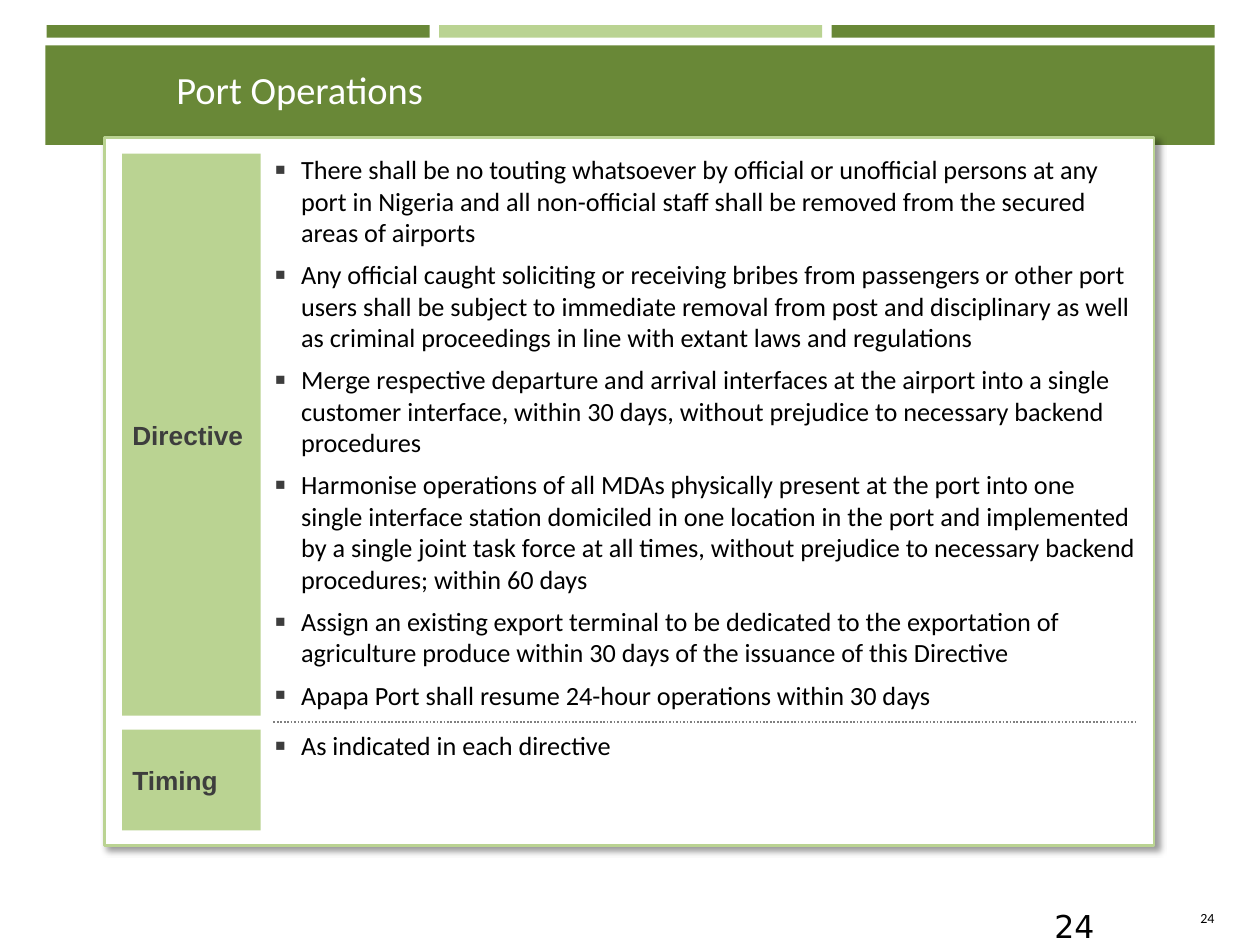
from pptx import Presentation
from pptx.util import Inches, Pt
from pptx.dml.color import RGBColor
from pptx.enum.dml import MSO_LINE
from pptx.enum.shapes import MSO_CONNECTOR, MSO_SHAPE
from pptx.enum.text import MSO_ANCHOR as ANCHOR, PP_ALIGN as ALIGN
from pptx.oxml import parse_xml
from pptx.oxml.ns import nsdecls

GREEN, PALE, GREY = "698837", "BAD392", "3D3D3D"
WHITE, BLACK = "FFFFFF", "000000"

TITLE = "Port Operations"
PAGE = "24"
# label, top, panel height, text height, bullets
ROWS = [
    ("Directive", 1.22, 4.46, 4.46, [
        "There shall be no touting whatsoever by official or unofficial persons at any port in Nigeria and all non-official staff shall be removed from the secured areas of airports",
        "Any official caught soliciting or receiving bribes from passengers or other port users shall be subject to immediate removal from post and disciplinary as well as criminal proceedings in line with extant laws and regulations",
        "Merge respective departure and arrival interfaces at the airport into a single customer interface, within 30 days, without prejudice to necessary backend procedures",
        "Harmonise operations of all MDAs physically present at the port into one single interface station domiciled in one location in the port and implemented by a single joint task force at all times, without prejudice to necessary backend procedures; within 60 days",
        "Assign an existing export terminal to be dedicated to the exportation of agriculture produce within 30 days of the issuance of this Directive",
        "Apapa Port shall resume 24-hour operations within 30 days",
    ]),
    ("Timing", 5.79, 0.8, 0.25, ["As indicated in each directive"]),
]
LABEL_X, LABEL_W = 0.97, 1.1
TEXT_X, TEXT_W = 2.17, 6.86
RULE_Y = 5.73

prs = Presentation()
prs.slide_width, prs.slide_height = Inches(10), Inches(7.5)
slide = prs.slides.add_slide(prs.slide_layouts[6])
shapes = slide.shapes


def color(code):
    return RGBColor.from_string(code)


def rect(x, y, w, h, fill):
    box = shapes.add_shape(MSO_SHAPE.RECTANGLE, *map(Inches, (x, y, w, h)))
    box.shadow.inherit = False
    box.fill.solid()
    box.fill.fore_color.rgb = color(fill)
    box.line.fill.background()
    return box


def set_frame(shape, pad=0, anchor=ANCHOR.TOP, wrap=True):
    frame = shape.text_frame
    frame.word_wrap = wrap
    frame.vertical_anchor = anchor
    frame.margin_left = frame.margin_right = Inches(pad)
    frame.margin_top = frame.margin_bottom = Inches(pad)
    return frame


def text_box(x, y, w, h, **style):
    return set_frame(shapes.add_textbox(*map(Inches, (x, y, w, h))), **style)


def add_run(para, text, size, code=BLACK, face="Calibri", bold=False):
    run = para.add_run()
    run.text = text
    font = run.font
    font.size, font.name, font.bold = Pt(size), face, bold
    font.color.rgb = color(code)


def add_bullet(para):
    props = para._p.get_or_add_pPr()
    props.set("marL", str(Inches(0.22)))
    props.set("indent", str(Inches(-0.21)))
    ns = nsdecls("a")
    for xml in (
        f'<a:buClr {ns}><a:srgbClr val="{GREY}"/></a:buClr>',
        f'<a:buSzPct {ns} val="125000"/>',
        f'<a:buFont {ns} typeface="Arial"/>',
        f'<a:buChar {ns} char="▪"/>',
    ):
        props.append(parse_xml(xml))


def add_shadow(shape):
    shape._element.spPr.find(
        "{*}effectLst").append(parse_xml(
            f'<a:outerShdw {nsdecls("a")} blurRad="{Pt(4)}" dist="{Pt(3)}" '
            'dir="2700000" algn="tl" rotWithShape="0">'
            f'<a:srgbClr val="{BLACK}"><a:alpha val="40000"/></a:srgbClr>'
            '</a:outerShdw>'))


# Header
rect(0.36, 0.36, 9.28, 0.79, GREEN)
for i, fill in enumerate((GREEN, PALE, GREEN)):
    rect(0.37 + i * 3.115, 0.2, 3.04, 0.1, fill)
title = text_box(1.4, 0.52, 8.25, 0.37, anchor=ANCHOR.BOTTOM)
add_run(title.paragraphs[0], TITLE, 22, WHITE)

# Page numbers
small = text_box(9.5, 7.22, 0.14, 0.13, anchor=ANCHOR.MIDDLE, wrap=False)
small.paragraphs[0].alignment = ALIGN.RIGHT
add_run(small.paragraphs[0], PAGE, 8)
large = text_box(8.27, 7.15, 0.77, 0.4)
large.margin_left = large.margin_right = Inches(0.1)
large.margin_top = large.margin_bottom = Inches(0.05)
add_run(large.paragraphs[0], PAGE, 18, face="DejaVu Sans")

# Card with labelled rows
card = rect(0.83, 1.09, 8.33, 5.62, WHITE)
card.line.color.rgb = color(PALE)
card.line.width = Pt(1.5)
add_shadow(card)

for label, top, height, text_h, points in ROWS:
    panel = rect(LABEL_X, top, LABEL_W, height, PALE)
    para = set_frame(panel, 0.08, ANCHOR.MIDDLE).paragraphs[0]
    para.alignment = ALIGN.LEFT
    add_run(para, label, 15, GREY, "Arial", True)

    body = text_box(TEXT_X, top, TEXT_W, text_h)
    for i, point in enumerate(points):
        para = body.add_paragraph() if i else body.paragraphs[0]
        add_bullet(para)
        para.space_before = Pt(3 if i else 0)
        para.space_after = Pt(3)
        add_run(para, point, 15)

rule = shapes.add_connector(MSO_CONNECTOR.STRAIGHT, *map(
    Inches, (TEXT_X, RULE_Y, TEXT_X + TEXT_W, RULE_Y)))
rule.line.color.rgb = color("808080")
rule.line.width = Pt(1)
rule.line.dash_style = MSO_LINE.ROUND_DOT
rule._element.spPr.append(parse_xml(f'<a:effectLst {nsdecls("a")}/>'))

prs.save("out.pptx")
